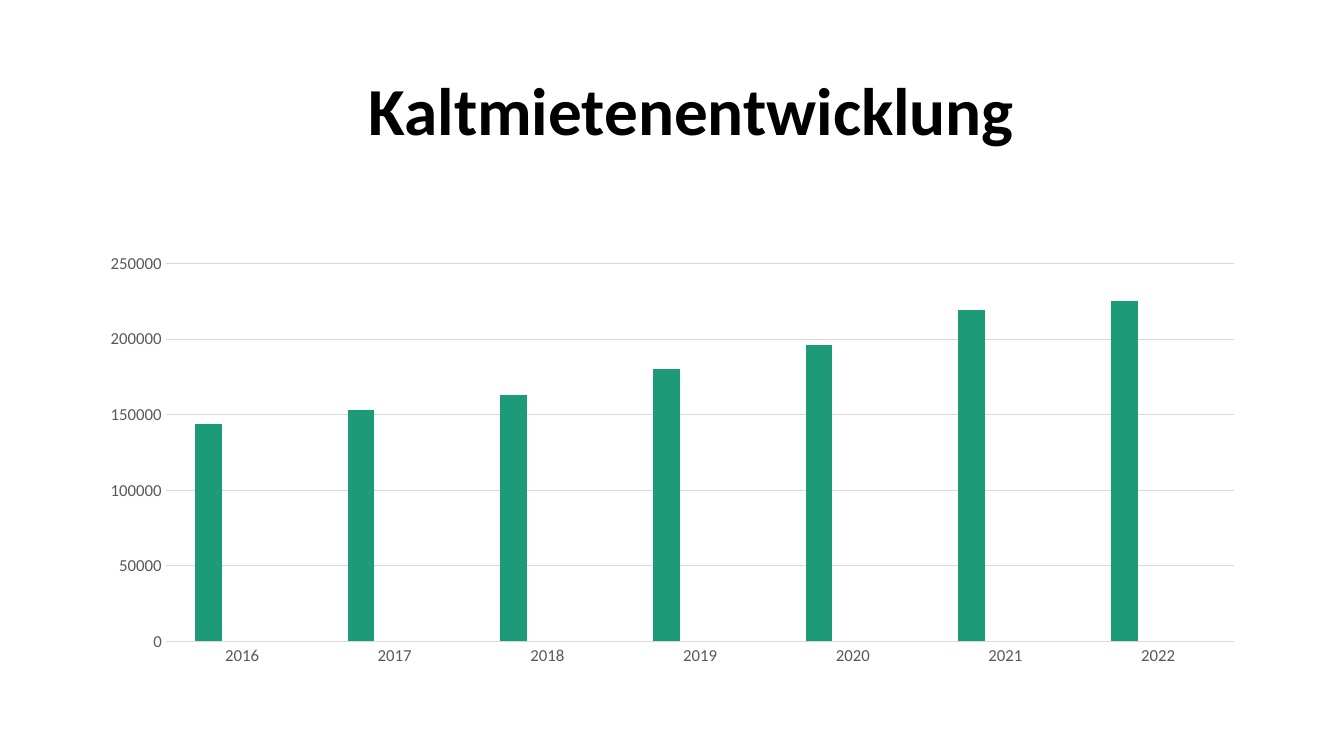
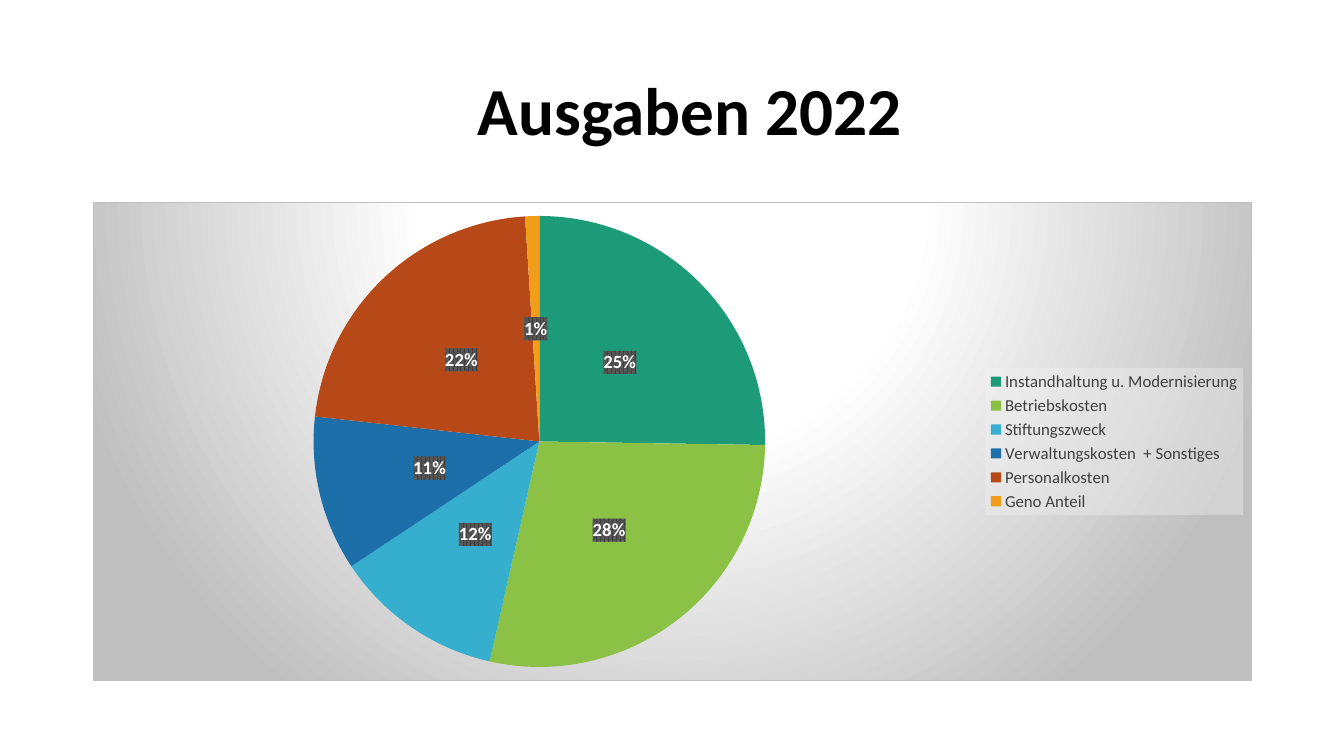
"""Build two slides on rents and spending, each with a title and a chart."""
from pptx import Presentation
from pptx.chart.data import CategoryChartData
from pptx.dml.color import RGBColor
from pptx.enum.chart import XL_CHART_TYPE, XL_LABEL_POSITION, XL_LEGEND_POSITION, XL_TICK_MARK
from pptx.enum.text import MSO_ANCHOR, PP_ALIGN
from pptx.oxml import parse_xml
from pptx.oxml.ns import nsdecls
from pptx.util import Pt

COLUMN = XL_CHART_TYPE.COLUMN_CLUSTERED
PIE = XL_CHART_TYPE.PIE
CENTER = XL_LABEL_POSITION.CENTER
RIGHT = XL_LEGEND_POSITION.RIGHT
NO_TICK = XL_TICK_MARK.NONE
MIDDLE = MSO_ANCHOR.MIDDLE
LEFT = PP_ALIGN.LEFT

FONT = "Calibri"
BLACK, WHITE = "000000", "FFFFFF"
GRID, LABEL, LEGEND, EDGE = "D9D9D9", "595959", "404040", "BFBFBF"
ACCENTS = ("1D9A78", "8BC145", "36AFCE", "1D6FA9", "B74919", "F19D19")
TITLE_BOX = [Pt(n) for n in (66.24, 28.8, 828, 104.4)]
CHART_BOX = [Pt(n) for n in (66.24, 144, 828, 342.72)]

PLOT = """<c:layout %s><c:manualLayout><c:layoutTarget val="inner"/>
<c:xMode val="edge"/><c:yMode val="edge"/><c:x val="0.063"/><c:y val="0.129"/>
<c:w val="0.922"/><c:h val="0.788"/></c:manualLayout></c:layout>"""
GLOW = f"""<a:gradFill><a:gsLst>
<a:gs pos="0"><a:srgbClr val="{WHITE}"/></a:gs>
<a:gs pos="39000"><a:srgbClr val="{WHITE}"/></a:gs>
<a:gs pos="100000"><a:srgbClr val="{EDGE}"/></a:gs></a:gsLst>
<a:path path="circle"><a:fillToRect l="50000" t="-80000" r="50000" b="180000"/></a:path>
</a:gradFill><a:ln w="9525"><a:solidFill><a:srgbClr val="{EDGE}"/></a:solidFill></a:ln>"""
VEIL = '<a:solidFill><a:srgbClr val="F2F2F2"><a:alpha val="39000"/></a:srgbClr></a:solidFill>'
WEAVE = f"""<a:pattFill prst="pct75"><a:fgClr><a:srgbClr val="{LEGEND}"/></a:fgClr>
<a:bgClr><a:srgbClr val="{LABEL}"/></a:bgClr></a:pattFill>"""


def paint(fill, color):
    """Give a fill one solid colour."""
    fill.solid()
    fill.fore_color.rgb = RGBColor.from_string(color)


def style(font, size, color, bold=False):
    """Set face, size, colour and weight of a font."""
    font.name, font.size, font.bold = FONT, Pt(size), bold
    font.color.rgb = RGBColor.from_string(color)


def rule(line, color):
    """Draw a thin line in one colour."""
    line.width = Pt(0.75)
    paint(line.fill, color)


def backdrop(chart, where, xml):
    """Put shape properties before the text properties found at a place."""
    target = chart.element.xpath(where + "/c:txPr")[0]
    target.addprevious(parse_xml(f'<c:spPr {nsdecls("c", "a")}>{xml}</c:spPr>'))


class Deck:
    """Hold the presentation and the slide being filled."""

    def __init__(self):
        """Open a blank wide presentation."""
        self.file = Presentation()
        self.file.slide_width, self.file.slide_height = Pt(960), Pt(540)
        self.slide = None

    def open(self, text, indent):
        """Add a slide whose title starts at an indent."""
        self.slide = self.file.slides.add_slide(self.file.slide_layouts[5])
        title = self.slide.shapes.title
        title.left, title.top, title.width, title.height = TITLE_BOX
        frame = title.text_frame
        frame.text, frame.word_wrap = text, True
        frame.vertical_anchor, frame.margin_left = MIDDLE, Pt(indent)
        para = frame.paragraphs[0]
        para.alignment, para.line_spacing = LEFT, 0.9
        style(para.font, 48, BLACK, True)

    def chart(self, kind, names, rows):
        """Add a chart with one series for each row."""
        data = CategoryChartData()
        data.categories = names
        for count, row in enumerate(rows, 1):
            data.add_series(f"Series {count}", row)
        chart = self.slide.shapes.add_chart(kind, *CHART_BOX, data).chart
        chart.has_title = chart.has_legend = False
        style(chart.font, 10, BLACK)
        return chart

    def columns(self, names, rows, top, step):
        """Add a column chart with a quiet grid."""
        chart = self.chart(COLUMN, names, rows)
        plot = chart.plots[0]
        plot.gap_width, plot.overlap, plot.vary_by_categories = 219, -27, False
        for series, color in zip(plot.series, ACCENTS):
            paint(series.format.fill, color)
        across, up = chart.category_axis, chart.value_axis
        for axis in (across, up):
            axis.major_tick_mark = axis.minor_tick_mark = NO_TICK
            style(axis.tick_labels.font, 12, LABEL)
        rule(across.format.line, GRID)
        up.format.line.fill.background()
        up.has_major_gridlines = True
        rule(up.major_gridlines.format.line, GRID)
        up.minimum_scale, up.maximum_scale, up.major_unit = 0, top, step
        area = chart.element.xpath(".//c:plotArea")[0]
        for layout in area.xpath("./c:layout"):
            area.remove(layout)
        area.insert(0, parse_xml(PLOT % nsdecls("c")))

    def pie(self, names, row):
        """Add a pie chart with percent labels and a legend."""
        chart = self.chart(PIE, names, [row])
        plot = chart.plots[0]
        plot.vary_by_categories = True
        series = plot.series[0]
        for place, color in enumerate(ACCENTS):
            paint(series.points[place].format.fill, color)
        labels = series.data_labels
        labels.show_percentage, labels.show_value = True, False
        labels.number_format, labels.number_format_is_linked = "0%", False
        labels.position = CENTER
        style(labels.font, 13.3, WHITE, True)
        chart.has_legend = True
        chart.legend.position, chart.legend.include_in_layout = RIGHT, False
        style(chart.legend.font, 12, LEGEND)
        for where, xml in ((".", GLOW), (".//c:legend", VEIL), (".//c:ser/c:dLbls", WEAVE)):
            backdrop(chart, where, xml)


def main():
    """Build and save both slides."""
    deck = Deck()
    years = [str(year) for year in range(2016, 2023)]
    rents = [144000, 153000, 163000, 180000, 196000, 219000, 225000]
    blank = [None] * len(years)
    deck.open("Kaltmietenentwicklung", 197)
    deck.columns(years, [rents, blank, blank], 250000, 50000)

    costs = {
        "Instandhaltung u. Modernisierung": 25,
        "Betriebskosten": 28,
        "Stiftungszweck": 12,
        "Verwaltungskosten  + Sonstiges": 11,
        "Personalkosten": 22,
        "Geno Anteil": 1,
    }
    deck.open("Ausgaben 2022", 275)
    deck.pie(list(costs), list(costs.values()))
    deck.file.save("out.pptx")


if __name__ == "__main__":
    main()
